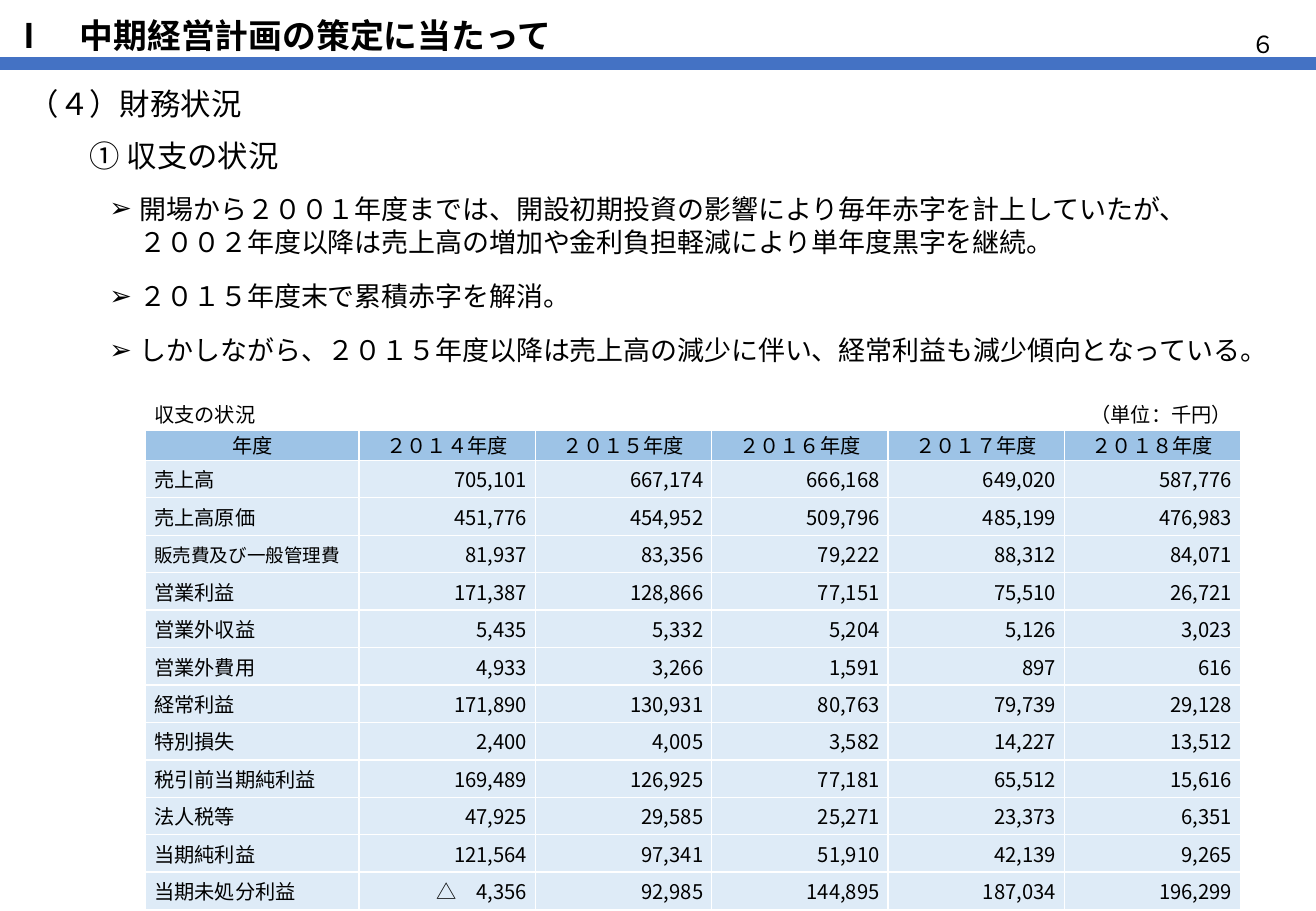
import pptx
import pptx.dml.color
import pptx.enum.shapes
import pptx.enum.text
import pptx.oxml.ns
import pptx.util
from lxml import etree

Pt = pptx.util.Pt
qn = pptx.oxml.ns.qn
ALIGN = pptx.enum.text.PP_ALIGN
ANCHOR = pptx.enum.text.MSO_ANCHOR
COLOURS = {"text": "000000", "rule": "4472C4", "header": "9DC3E6",
           "row": "DEEBF7", "border": "FFFFFF"}
JAPANESE = "Noto Sans CJK JP"


def colour(name):
    return pptx.dml.color.RGBColor.from_string(COLOURS[name])


def style(para, size, font="Calibri", bold=False, align=ALIGN.LEFT, spacing=None):
    para.alignment = align
    para.line_spacing = spacing
    for span in para.runs:
        span.font.size = Pt(size)
        span.font.name = font
        span.font.bold = bold
        span.font.color.rgb = colour("text")
        east_asian = etree.SubElement(span.font._element, qn("a:ea"))
        east_asian.set("typeface", JAPANESE)


deck = pptx.Presentation()
deck.slide_width, deck.slide_height = Pt(780), Pt(540)
page = deck.slides.add_slide(deck.slide_layouts[1])

# Title
title = page.shapes.title
title.left, title.top, title.width, title.height = Pt(0), Pt(6.5), Pt(780), Pt(31)
title.text_frame.text = "Ⅰ　中期経営計画の策定に当たって"
title.text_frame.auto_size = pptx.enum.text.MSO_AUTO_SIZE.NONE
title.text_frame.vertical_anchor = ANCHOR.MIDDLE
style(title.text_frame.paragraphs[0], 20, bold=True, spacing=0.9)

# Bulleted findings
findings = [
    "開場から２００１年度までは、開設初期投資の影響により毎年赤字を計上していたが、\v"
    "２００２年度以降は売上高の増加や金利負担軽減により単年度黒字を継続。",
    "２０１５年度末で累積赤字を解消。",
    "しかしながら、２０１５年度以降は売上高の減少に伴い、経常利益も減少傾向となっている。",
]
body = page.placeholders[1]
body.left, body.top, body.width, body.height = Pt(57.6), Pt(109.5), Pt(708.5), Pt(121)
body.text_frame.text = "\n".join(findings)
body.text_frame.auto_size = pptx.enum.text.MSO_AUTO_SIZE.NONE
for para in body.text_frame.paragraphs:
    style(para, 16, "Arial", spacing=Pt(20))
    para.space_before = Pt(12)
    properties = para._p.get_or_add_pPr()
    properties.set("marL", str(Pt(18)))
    properties.set("indent", str(-Pt(18)))
    etree.SubElement(properties, qn("a:buFont")).set("typeface", "Arial")
    etree.SubElement(properties, qn("a:buChar")).set("char", "➢")

# Rule under the title
rule = page.shapes.add_connector(
    pptx.enum.shapes.MSO_CONNECTOR.STRAIGHT, Pt(0), Pt(37.5), Pt(780), Pt(37.5))
rule.line.color.rgb = colour("rule")
rule.line.width = Pt(7.75)
etree.SubElement(rule._element.spPr, qn("a:effectLst"))

# Section headings and page number
labels = [
    ("（４）財務状況", 10, 47, 760, 18),
    ("① 収支の状況", 46, 78, 724, 18),
    ("６", 735, 11.5, 35.5, 14),
]
for text, left, top, width, size in labels:
    box = page.shapes.add_textbox(Pt(left), Pt(top), Pt(width), Pt(31))
    box.text_frame.word_wrap = True
    box.text_frame.vertical_anchor = ANCHOR.MIDDLE
    box.text_frame.text = text
    style(box.text_frame.paragraphs[0], size, spacing=0.9)

# Income table
rows = [
    ["収支の状況", "", "", "", "", "（単位：千円）"],
    ["年度", "２０１４年度", "２０１５年度", "２０１６年度", "２０１７年度", "２０１８年度"],
    ["売上高", "705,101", "667,174", "666,168", "649,020", "587,776"],
    ["売上高原価", "451,776", "454,952", "509,796", "485,199", "476,983"],
    ["販売費及び一般管理費", "81,937", "83,356", "79,222", "88,312", "84,071"],
    ["営業利益", "171,387", "128,866", "77,151", "75,510", "26,721"],
    ["営業外収益", "5,435", "5,332", "5,204", "5,126", "3,023"],
    ["営業外費用", "4,933", "3,266", "1,591", "897", "616"],
    ["経常利益", "171,890", "130,931", "80,763", "79,739", "29,128"],
    ["特別損失", "2,400", "4,005", "3,582", "14,227", "13,512"],
    ["税引前当期純利益", "169,489", "126,925", "77,181", "65,512", "15,616"],
    ["法人税等", "47,925", "29,585", "25,271", "23,373", "6,351"],
    ["当期純利益", "121,564", "97,341", "51,910", "42,139", "9,265"],
    ["当期未処分利益", "△　4,356", "92,985", "144,895", "187,034", "196,299"],
]
CAPTION, HEADER = 0, 1
table = page.shapes.add_table(
    len(rows), len(rows[0]), Pt(86.4), Pt(235.5), Pt(649), Pt(304)).table
for index, column in enumerate(table.columns):
    column.width = Pt(104.5 if index else 126.5)

for row_index, values in enumerate(rows):
    table.rows[row_index].height = Pt(18.7 if row_index <= HEADER else 22.2)
    for column_index, value in enumerate(values):
        cell = table.cell(row_index, column_index)
        cell.margin_left = cell.margin_right = Pt(5)
        cell.margin_top = cell.margin_bottom = Pt(0)
        cell.vertical_anchor = ANCHOR.BOTTOM if row_index == CAPTION else ANCHOR.MIDDLE
        cell.text_frame.text = value

        # Text
        para = cell.text_frame.paragraphs[0]
        align = ALIGN.RIGHT if column_index else ALIGN.LEFT
        if row_index == HEADER:
            align = ALIGN.CENTER
        style(para, 11 if value == "販売費及び一般管理費" else 12, JAPANESE, align=align)
        if not value:
            etree.SubElement(para._p, qn("a:endParaRPr")).set("sz", "1200")

        # Borders, heavier around the caption's lower edge
        for side in ("L", "R", "T", "B"):
            heavy = (row_index, side) in ((CAPTION, "B"), (HEADER, "T"))
            edge = etree.SubElement(cell._tc.get_or_add_tcPr(), qn("a:ln" + side))
            edge.set("w", str(Pt(3 if heavy else 1)))
            paint = etree.SubElement(edge, qn("a:solidFill"))
            etree.SubElement(paint, qn("a:srgbClr")).set("val", COLOURS["border"])

        # Fill
        if row_index == CAPTION:
            cell.fill.background()
        else:
            cell.fill.solid()
            cell.fill.fore_color.rgb = colour("header" if row_index == HEADER else "row")

deck.save("out.pptx")
